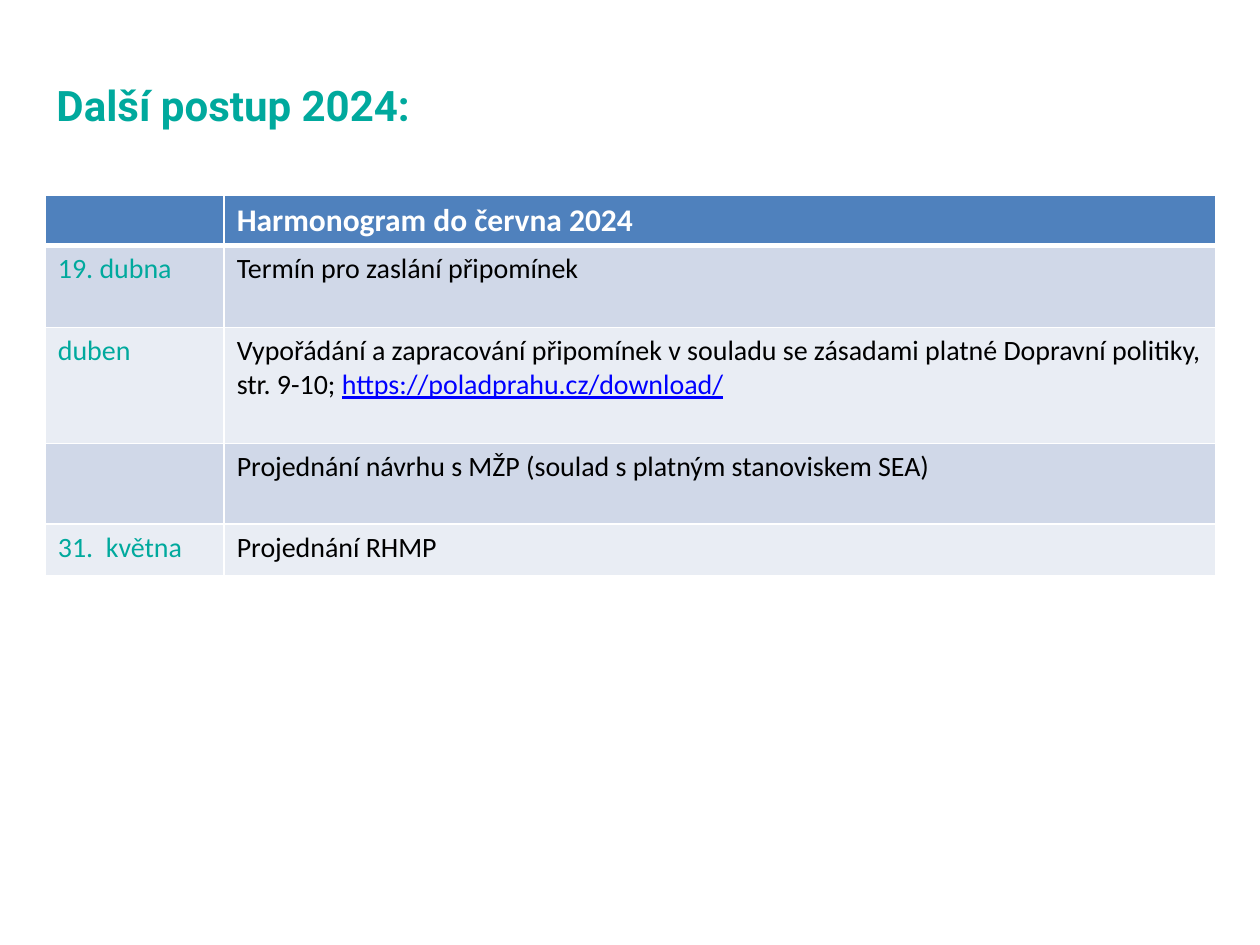
from lxml.etree import SubElement
from pptx import Presentation
from pptx.dml.color import RGBColor
from pptx.enum.text import MSO_ANCHOR
from pptx.oxml.ns import qn
from pptx.util import Inches, Pt

TEAL = RGBColor(0x00, 0xA9, 0x9D)
BLUE = RGBColor(0x4F, 0x81, 0xBD)
BAND_DARK = RGBColor(0xD0, 0xD8, 0xE8)
BAND_LIGHT = RGBColor(0xE9, 0xED, 0xF4)
LINK = RGBColor(0x00, 0x00, 0xFF)
BLACK = RGBColor(0x00, 0x00, 0x00)
WHITE = RGBColor(0xFF, 0xFF, 0xFF)

COLUMN_WIDTHS = [1.42, 7.87]
ROW_HEIGHTS = [0.4, 0.65, 0.92, 0.64, 0.41]
HEADING = "Harmonogram do června 2024"
STEPS = [
    ("19. dubna", [("Termín pro zaslání připomínek", BLACK)]),
    ("duben", [
        ("Vypořádání a zapracování připomínek v souladu se zásadami "
         "platné Dopravní politiky, str. 9-10; ", BLACK),
        ("https://poladprahu.cz/download/", LINK),
    ]),
    ("", [("Projednání návrhu s MŽP (soulad s platným stanoviskem SEA)", BLACK)]),
    ("31.  května", [("Projednání RHMP", BLACK)]),
]


def add_span(para, text, size, color, bold=False, name="Calibri"):
    span = para.add_run()
    span.text = text
    span.font.size = Pt(size)
    span.font.name = name
    span.font.bold = bold
    span.font.color.rgb = color
    if color == LINK:
        span.font.underline = True


def set_borders(cell, widths):
    properties = cell._tc.get_or_add_tcPr()
    for position, (side, width) in enumerate(zip("LRTB", widths)):
        line = SubElement(properties, qn(f"a:ln{side}"), w=str(Pt(width)))
        fill = SubElement(line, qn("a:solidFill"))
        SubElement(fill, qn("a:srgbClr"), val=str(WHITE))
        properties.insert(position, line)


def fill_cell(cell, spans, size, fill, bold=False, top=1, bottom=1):
    cell.fill.solid()
    cell.fill.fore_color.rgb = fill
    set_borders(cell, (1, 1, top, bottom))
    para = cell.text_frame.paragraphs[0]
    para.font.size = Pt(size)
    for text, color in spans:
        if text:
            add_span(para, text, size, color, bold)


def add_title(page, left, top, width, height):
    box = page.shapes.add_textbox(left, top, width, height)
    frame = box.text_frame
    frame.word_wrap = True
    frame.vertical_anchor = MSO_ANCHOR.MIDDLE
    add_span(frame.paragraphs[0], "Další postup 2024:", 24, TEAL, True, "Roboto")


def add_schedule(page, left, top, width, height):
    table = page.shapes.add_table(
        len(STEPS) + 1, len(COLUMN_WIDTHS), left, top, width, height
    ).table
    for column, share in zip(table.columns, COLUMN_WIDTHS):
        column.width = int(width * share / sum(COLUMN_WIDTHS))
    for row, share in zip(table.rows, ROW_HEIGHTS):
        row.height = int(height * share / sum(ROW_HEIGHTS))
    for column, text in enumerate(("", HEADING)):
        fill_cell(table.cell(0, column), [(text, WHITE)], 18, BLUE, True, bottom=3)
    for row, (date, spans) in enumerate(STEPS, start=1):
        band = BAND_DARK if row % 2 else BAND_LIGHT
        top_width = 3 if row == 1 else 1
        fill_cell(table.cell(row, 0), [(date, TEAL)], 16, band, top=top_width)
        fill_cell(table.cell(row, 1), spans, 16, band, top=top_width)


def main():
    deck = Presentation()
    deck.slide_width = Inches(10)
    deck.slide_height = Inches(7.5)
    page = deck.slides.add_slide(deck.slide_layouts[6])
    add_title(page, Inches(0.35), Inches(0.6), Inches(8.74), Inches(0.47))
    add_schedule(
        page, Inches(0.36), Inches(1.55),
        Inches(sum(COLUMN_WIDTHS)), Inches(sum(ROW_HEIGHTS)),
    )
    deck.save("out.pptx")


if __name__ == "__main__":
    main()
